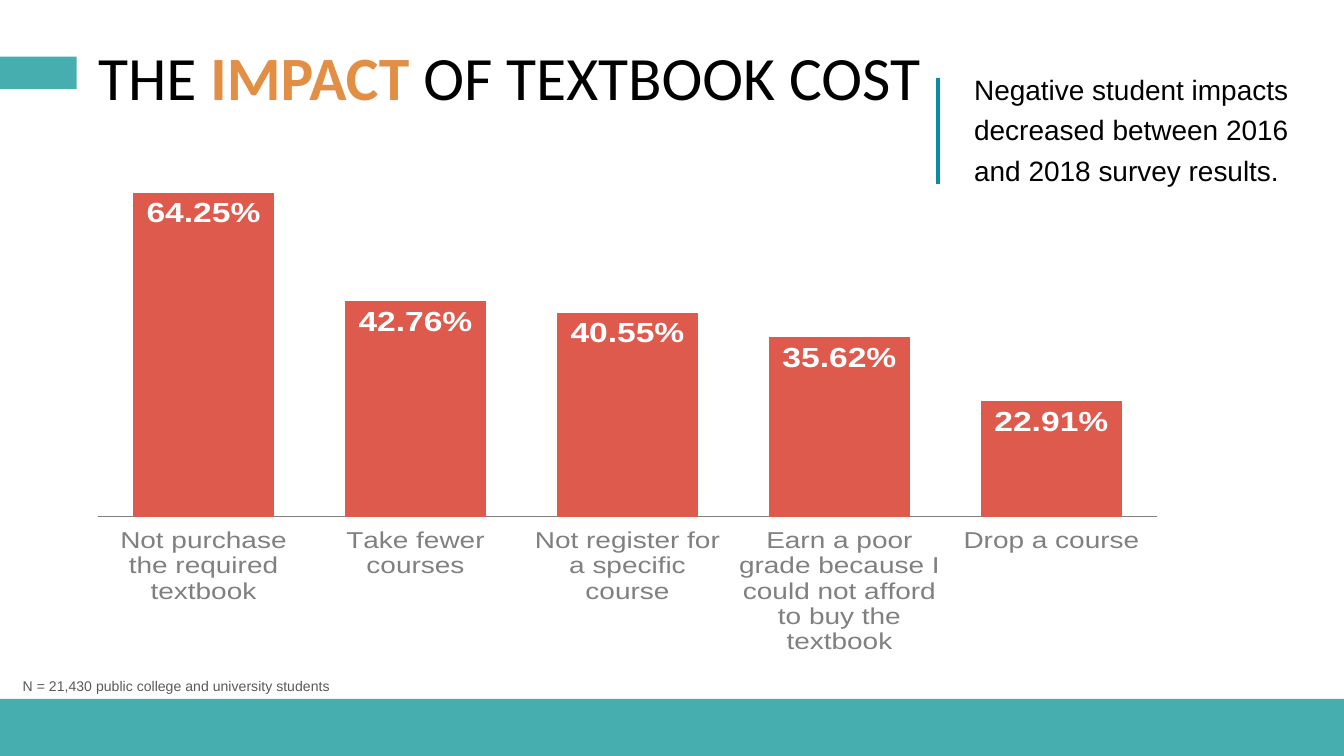
from dataclasses import dataclass
from lxml import etree
from pptx import Presentation
from pptx.chart.data import CategoryChartData as Data
from pptx.dml.color import RGBColor as RGB
from pptx.enum.chart import XL_CHART_TYPE as Kind, XL_LABEL_POSITION as Spot
from pptx.enum.chart import XL_TICK_MARK as Tick, XL_TICK_LABEL_POSITION as Side
from pptx.enum.shapes import MSO_CONNECTOR as Wire, MSO_SHAPE as Form
from pptx.enum.text import MSO_ANCHOR as Anchor, PP_ALIGN as Align
from pptx.oxml import parse_xml
from pptx.oxml.ns import nsdecls, qn
from pptx.util import Cm, Pt


@dataclass(frozen=True)
class Theme:
    teal: RGB = RGB.from_string("46AEAF")
    blue: RGB = RGB.from_string("088DA1")
    red: RGB = RGB.from_string("DE5A4D")
    gold: RGB = RGB.from_string("E28F45")
    gray: RGB = RGB.from_string("808080")
    dark: RGB = RGB.from_string("595959")
    black: RGB = RGB.from_string("000000")
    white: RGB = RGB.from_string("FFFFFF")
    head: Pt = Pt(33)
    label: Pt = Pt(18)
    body: Pt = Pt(15)
    note: Pt = Pt(7.5)
    sans: str = "Arial"
    title: str = "Calibri"


theme = Theme()


def style(font, size, color, name=theme.sans, bold=False):
    font.size, font.name, font.bold = size, name, bold
    font.color.rgb = color


def add_text(box, text, size, color, wrap):
    frame = slide.shapes.add_textbox(*map(Cm, box)).text_frame
    frame.word_wrap = wrap
    para = frame.paragraphs[0]
    para.text, para.line_spacing = text, 1.2
    style(para.font, size, color)


deck = Presentation()
deck.slide_width, deck.slide_height = Cm(25.4), Cm(14.29)
slide = deck.slides.add_slide(deck.slide_layouts[5])

# Teal bars: footer band and title marker
for box in [(0, 13.21, 25.4, 1.08), (0, 1.07, 1.45, 0.61)]:
    bar = slide.shapes.add_shape(Form.RECTANGLE, *map(Cm, box))
    bar.shadow.inherit = False
    bar.fill.solid()
    bar.fill.fore_color.rgb = theme.teal
    bar.line.fill.background()

# Title
title = slide.shapes.title
title.left, title.top, title.width, title.height = map(Cm, (1.6, 0.79, 23.8, 1.45))
title.text_frame.vertical_anchor = Anchor.MIDDLE
para = title.text_frame.paragraphs[0]
para.alignment, para.line_spacing = Align.LEFT, 0.9
for text, color, bold in [("THE ", theme.black, False),
                          ("IMPACT", theme.gold, True),
                          (" OF TEXTBOOK COST", theme.black, False)]:
    run = para.add_run()
    run.text = text
    style(run.font, theme.head, color, theme.title, bold)

# Sample size
add_text((0.18, 12.62, 6.38, 0.63), "N = 21,430 public college and university students",
         theme.note, theme.dark, False)

# Column chart
shares = {
    "Not purchase the required textbook": 0.6425,
    "Take fewer courses": 0.4276,
    "Not register for a specific course": 0.4055,
    "Earn a poor grade because I could not afford to buy the textbook": 0.3562,
    "Drop a course": 0.2291,
}
data = Data(number_format="0.00%")
data.categories = list(shares)
data.add_series("Series 1", list(shares.values()))
frame = slide.shapes.add_chart(Kind.COLUMN_CLUSTERED,
                               *map(Cm, (1.83, 2.95, 20.88, 9.42)), data)
chart = frame.chart
chart.has_legend = chart.has_title = False
style(chart.font, theme.body, theme.black)

plot = chart.plots[0]
plot.gap_width, plot.overlap, plot.vary_by_categories = 50, -25, False
series = plot.series[0]
series.format.fill.solid()
series.format.fill.fore_color.rgb = theme.red
labels = series.data_labels
labels.show_value, labels.position = True, Spot.INSIDE_END
labels.number_format, labels.number_format_is_linked = "0.00%", False
style(labels.font, theme.label, theme.white, bold=True)

# Axes
cats, vals = chart.category_axis, chart.value_axis
cats.major_tick_mark = cats.minor_tick_mark = Tick.NONE
cats.tick_label_position = Side.LOW
cats.format.line.color.rgb = theme.gray
style(cats.tick_labels.font, theme.body, theme.gray)
vals.visible = vals.has_major_gridlines = False
vals.minimum_scale, vals.maximum_scale = 0, 0.7

# Fixed inner plot area
area = chart.element.find(".//" + qn("c:plotArea"))
for old in area.findall(qn("c:layout")):
    area.remove(old)
sizes = "".join(f'<c:{tag} val="{val}"/>' for tag, val in [
    ("layoutTarget", "inner"), ("xMode", "edge"), ("yMode", "edge"),
    ("x", 0), ("y", 0.02), ("w", 0.96), ("h", 0.86)])
area.insert(0, parse_xml(f'<c:layout {nsdecls("c")}><c:manualLayout>{sizes}'
                         '</c:manualLayout></c:layout>'))

# Takeaway with its rule
add_text((18.16, 1.12, 7.01, 2.57),
         "Negative student impacts decreased between 2016 and 2018 survey results.",
         theme.body, theme.black, True)
rule = slide.shapes.add_connector(Wire.STRAIGHT, *map(Cm, (17.73, 1.47, 17.73, 3.48)))
rule.line.color.rgb, rule.line.width = theme.blue, Pt(2)
etree.SubElement(rule.element.spPr, qn("a:effectLst"))

deck.save("out.pptx")
